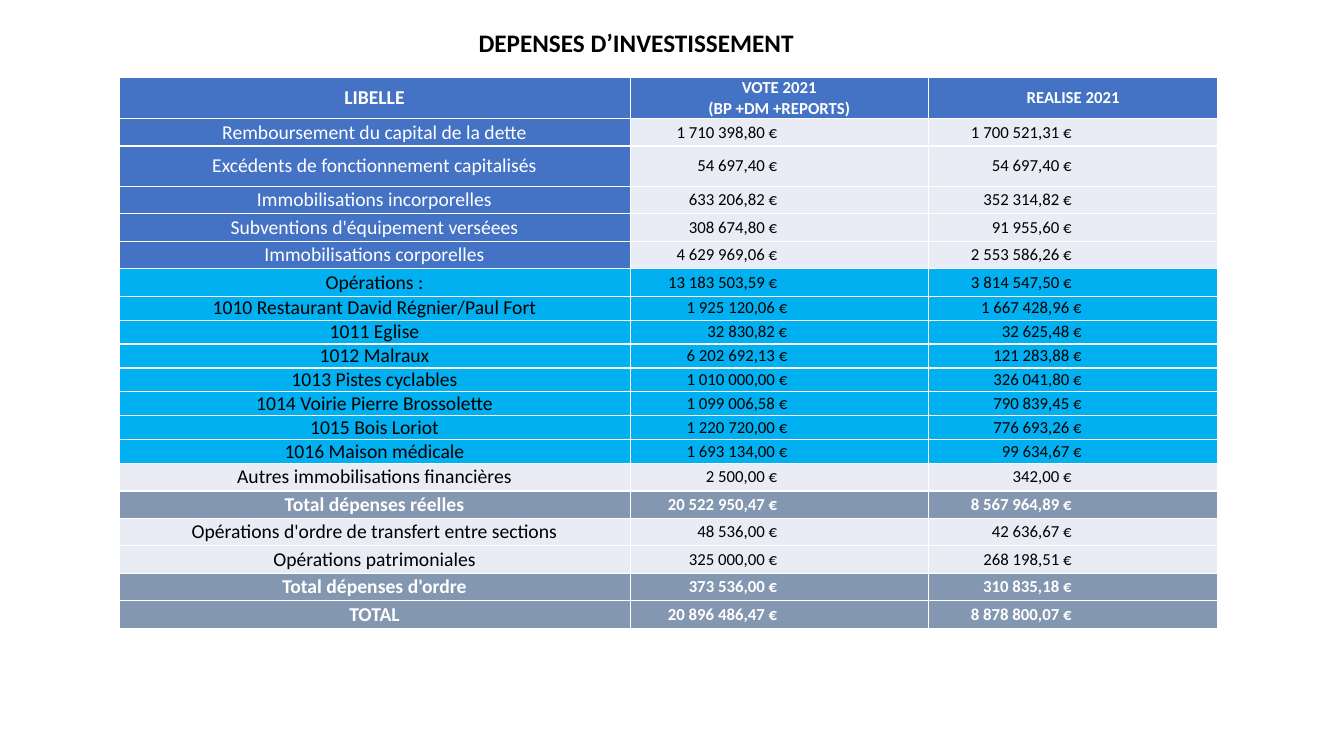
from dataclasses import dataclass

import pptx
import pptx.dml.color
import pptx.enum.text
import pptx.oxml
import pptx.oxml.ns
import pptx.util
from pptx.util import Inches


@dataclass(frozen=True)
class Theme:
    """Font, colours and type sizes of the slide."""
    font: str = "Calibri"
    black: str = "000000"
    white: str = "FFFFFF"
    blue: str = "4472C4"
    pale: str = "E9EBF5"
    cyan: str = "00B0F0"
    slate: str = "8497B0"
    title_size: int = 18
    label_size: int = 14
    amount_size: int = 12
    border_width: int = 1


@dataclass(frozen=True)
class RowStyle:
    """Look of one kind of table row."""
    label_fill: str
    label_color: str
    amount_fill: str
    amount_color: str
    bold: bool = False
    height: float = 3 / 11
    shift: float = 0


THEME = Theme()
ALIGN = pptx.enum.text.PP_ALIGN
MIDDLE = pptx.enum.text.MSO_ANCHOR.MIDDLE

COLUMN_WIDTHS = (5.07, 2.96, 2.87)
AMOUNT_MARGINS = (1.5, 1.45)

STYLES = {
    "header": RowStyle(THEME.blue, THEME.white, THEME.blue, THEME.white, bold=True, height=0.4),
    "expense": RowStyle(THEME.blue, THEME.white, THEME.pale, THEME.black),
    "tall": RowStyle(THEME.blue, THEME.white, THEME.pale, THEME.black, height=0.4),
    "operations": RowStyle(THEME.cyan, THEME.black, THEME.cyan, THEME.black),
    "detail": RowStyle(THEME.cyan, THEME.black, THEME.cyan, THEME.black,
                       height=1.64 / 7, shift=0.1),
    "other": RowStyle(THEME.pale, THEME.black, THEME.pale, THEME.black),
    "total": RowStyle(THEME.slate, THEME.white, THEME.slate, THEME.white, bold=True),
}

ROWS = (
    ("header", "LIBELLE", "VOTE 2021\v(BP +DM +REPORTS)", "REALISE 2021"),
    ("expense", "Remboursement du capital de la dette", "1 710 398,80 €", "1 700 521,31 €"),
    ("tall", "Excédents de fonctionnement capitalisés", "54 697,40 €", "54 697,40 €"),
    ("expense", "Immobilisations incorporelles", "633 206,82 €", "352 314,82 €"),
    ("expense", "Subventions d'équipement verséees", "308 674,80 €", "91 955,60 €"),
    ("expense", "Immobilisations corporelles", "4 629 969,06 €", "2 553 586,26 €"),
    ("operations", "Opérations :", "13 183 503,59 €", "3 814 547,50 €"),
    ("detail", "1010 Restaurant David Régnier/Paul Fort", "1 925 120,06 €", "1 667 428,96 €"),
    ("detail", "1011 Eglise", "32 830,82 €", "32 625,48 €"),
    ("detail", "1012 Malraux", "6 202 692,13 €", "121 283,88 €"),
    ("detail", "1013 Pistes cyclables", "1 010 000,00 €", "326 041,80 €"),
    ("detail", "1014 Voirie Pierre Brossolette", "1 099 006,58 €", "790 839,45 €"),
    ("detail", "1015 Bois Loriot", "1 220 720,00 €", "776 693,26 €"),
    ("detail", "1016 Maison médicale", "1 693 134,00 €", "99 634,67 €"),
    ("other", "Autres immobilisations financières", "2 500,00 €", "342,00 €"),
    ("total", "Total dépenses réelles", "20 522 950,47 €", "8 567 964,89 €"),
    ("other", "Opérations d'ordre de transfert entre sections", "48 536,00 €", "42 636,67 €"),
    ("other", "Opérations patrimoniales", "325 000,00 €", "268 198,51 €"),
    ("total", "Total dépenses d'ordre", "373 536,00 €", "310 835,18 €"),
    ("total", "TOTAL", "20 896 486,47 €", "8 878 800,07 €"),
)


def rgb(color):
    """Turn a hexadecimal string into a colour."""
    return pptx.dml.color.RGBColor.from_string(color)


def format_text(frame, size, color, bold, align):
    """Format every paragraph and run of a text frame."""
    for para in frame.paragraphs:
        para.alignment = align
        for span in para.runs:
            span.font.name = THEME.font
            span.font.size = pptx.util.Pt(size)
            span.font.bold = bold
            span.font.color.rgb = rgb(color)


def add_borders(cell):
    """Draw a thin white line on the four sides of a cell."""
    properties = cell._tc.get_or_add_tcPr()
    width = pptx.util.Pt(THEME.border_width)
    for side in ("lnL", "lnR", "lnT", "lnB"):
        properties.append(pptx.oxml.parse_xml(
            f'<a:{side} {pptx.oxml.ns.nsdecls("a")} w="{width}"><a:solidFill>'
            f'<a:srgbClr val="{THEME.white}"/></a:solidFill></a:{side}>'))


def fill_cell(cell, text, size, fill, color, bold, align, right_margin=0):
    """Write and format one table cell."""
    add_borders(cell)
    cell.fill.solid()
    cell.fill.fore_color.rgb = rgb(fill)
    cell.margin_left = cell.margin_top = cell.margin_bottom = Inches(0)
    cell.margin_right = Inches(right_margin)
    cell.vertical_anchor = MIDDLE
    cell.text_frame.text = text
    format_text(cell.text_frame, size, color, bold, align)


def add_title(page, text):
    """Place the slide title in its placeholder."""
    title = page.shapes.title
    title.left, title.top = Inches(0.86), Inches(0.21)
    title.width, title.height = Inches(10.9), Inches(0.42)
    title.text_frame.text = text
    title.text_frame.vertical_anchor = MIDDLE
    title.text_frame.auto_size = pptx.enum.text.MSO_AUTO_SIZE.NONE
    format_text(title.text_frame, THEME.title_size, THEME.black, True, ALIGN.CENTER)


def add_expense_table(page):
    """Add the table of voted and realised expenses."""
    height = sum(STYLES[kind].height for kind, *_ in ROWS)
    table = page.shapes.add_table(
        len(ROWS), len(COLUMN_WIDTHS), Inches(1.18), Inches(0.77),
        Inches(sum(COLUMN_WIDTHS)), Inches(height)).table
    for column, width in zip(table.columns, COLUMN_WIDTHS):
        column.width = Inches(width)
    for index, (kind, label, *amounts) in enumerate(ROWS):
        style = STYLES[kind]
        table.rows[index].height = Inches(style.height)
        fill_cell(table.cell(index, 0), label, THEME.label_size, style.label_fill,
                  style.label_color, style.bold, ALIGN.CENTER)
        for column, (amount, margin) in enumerate(zip(amounts, AMOUNT_MARGINS), start=1):
            is_header = kind == "header"
            fill_cell(table.cell(index, column), amount, THEME.amount_size,
                      style.amount_fill, style.amount_color, style.bold,
                      ALIGN.CENTER if is_header else ALIGN.RIGHT,
                      0 if is_header else margin - style.shift)


def main():
    """Build the slide and save the deck."""
    deck = pptx.Presentation()
    deck.slide_width, deck.slide_height = Inches(13.33), Inches(7.5)
    page = deck.slides.add_slide(deck.slide_layouts.get_by_name("Title Only"))
    add_title(page, "DEPENSES D’INVESTISSEMENT")
    add_expense_table(page)
    deck.save("out.pptx")


if __name__ == "__main__":
    main()
